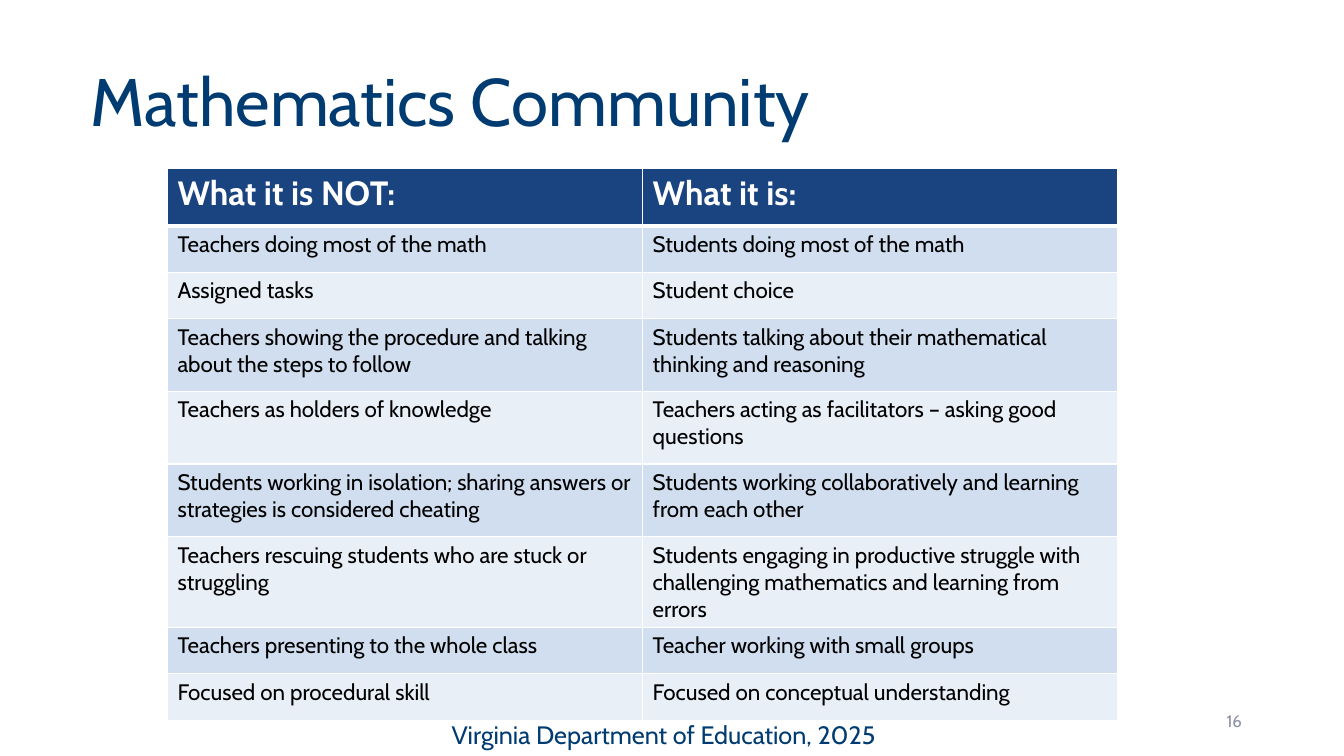
"""Build the Mathematics Community comparison slide."""
import pptx
import pptx.dml.color
import pptx.enum.text
import pptx.oxml
import pptx.oxml.ns
import pptx.util

Cm, Pt = pptx.util.Cm, pptx.util.Pt
RGBColor = pptx.dml.color.RGBColor
PP_ALIGN = pptx.enum.text.PP_ALIGN
MSO_ANCHOR = pptx.enum.text.MSO_ANCHOR

FONT = "Cabin"
NAVY = RGBColor(0x00, 0x3C, 0x71)
HEADER_BLUE = RGBColor(0x1A, 0x44, 0x80)
BAND_DARK = RGBColor(0xD0, 0xDE, 0xEF)
BAND_LIGHT = RGBColor(0xE9, 0xEF, 0xF7)
GREY = RGBColor(0x8C, 0x92, 0xA5)
BLACK = RGBColor(0x00, 0x00, 0x00)
WHITE = RGBColor(0xFF, 0xFF, 0xFF)

ROWS = [
    (1.45, "What it is NOT:", "What it is:"),
    (1.17, "Teachers doing most of the math", "Students doing most of the math"),
    (1.17, "Assigned tasks", "Student choice"),
    (1.83, "Teachers showing the procedure and talking about the steps to follow",
     "Students talking about their mathematical thinking and reasoning"),
    (1.83, "Teachers as holders of knowledge",
     "Teachers acting as facilitators – asking good questions"),
    (1.83, "Students working in isolation; sharing answers or strategies is considered cheating",
     "Students working collaboratively and learning from each other"),
    (1.83, "Teachers rescuing students who are stuck or struggling",
     "Students engaging in productive struggle with challenging mathematics "
     "and learning from errors"),
    (1.17, "Teachers presenting to the whole class", "Teacher working with small groups"),
    (1.17, "Focused on procedural skill", "Focused on conceptual understanding"),
]


def write(tf, text, size, color, bold=False):
    tf.text = text
    p = tf.paragraphs[0]
    font = p.runs[0].font
    font.name, font.size, font.bold = FONT, Pt(size), bold
    font.color.rgb = color
    return p


def add_border(cell, side, width):
    cell._tc.get_or_add_tcPr().append(pptx.oxml.parse_xml(
        f'<a:{side} {pptx.oxml.ns.nsdecls("a")} w="{Pt(width)}">'
        f'<a:solidFill><a:srgbClr val="{WHITE}"/></a:solidFill></a:{side}>'))


prs = pptx.Presentation()
prs.slide_width, prs.slide_height = Cm(33.87), Cm(19.05)
s = prs.slides.add_slide(prs.slide_layouts[6])

title = s.shapes.add_textbox(Cm(0), Cm(0), Cm(33.87), Cm(3.68))
tf = title.text_frame
tf.word_wrap = True
tf.vertical_anchor = MSO_ANCHOR.BOTTOM
tf.margin_left = Cm(2.29)
p = write(tf, "Mathematics Community", 48, NAVY)
p.line_spacing = 0.9

number = s.shapes.add_textbox(Cm(23.93), Cm(17.65), Cm(7.62), Cm(1.01))
tf = number.text_frame
tf.word_wrap = True
tf.vertical_anchor = MSO_ANCHOR.MIDDLE
p = write(tf, "16", 12, GREY)
p.alignment = PP_ALIGN.RIGHT

height = sum(row[0] for row in ROWS)
table = s.shapes.add_table(len(ROWS), 2, Cm(4.22), Cm(4.24), Cm(23.95), Cm(height)).table
for r, (row_height, *texts) in enumerate(ROWS):
    table.rows[r].height = Cm(row_height)
    header = r == 0
    fill = HEADER_BLUE if header else BAND_DARK if r % 2 else BAND_LIGHT
    for c, text in enumerate(texts):
        cell = table.cell(r, c)
        write(cell.text_frame, text, 24 if header else 16,
              WHITE if header else BLACK, header)
        add_border(cell, "lnL", 1)
        add_border(cell, "lnR", 1)
        add_border(cell, "lnT", 3 if r == 1 else 1)
        add_border(cell, "lnB", 3 if header else 1)
        cell.fill.solid()
        cell.fill.fore_color.rgb = fill

source = s.shapes.add_textbox(Cm(11.13), Cm(18.01), Cm(11.61), Cm(1.03))
tf = source.text_frame
tf.word_wrap = True
write(tf, "Virginia Department of Education, 2025", 18, NAVY)

prs.save("out.pptx")
